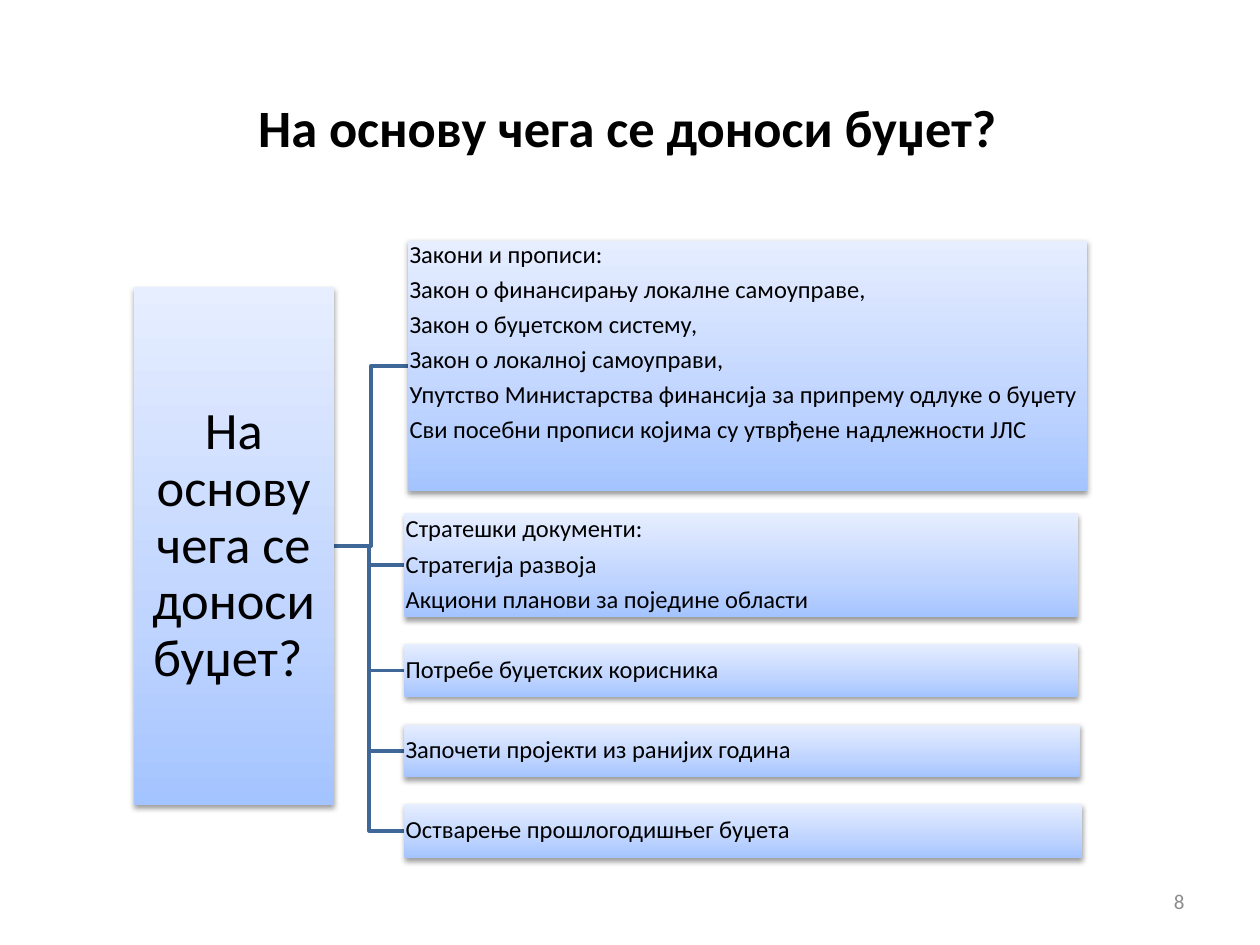
from lxml.etree import SubElement
from pptx import Presentation
from pptx.dml.color import RGBColor
from pptx.enum.shapes import MSO_SHAPE
from pptx.enum.text import MSO_ANCHOR, PP_ALIGN
from pptx.oxml import parse_xml
from pptx.oxml.ns import nsdecls, qn
from pptx.util import Inches, Pt

BLACK = RGBColor(0x00, 0x00, 0x00)
GRAY = RGBColor(0x8C, 0x8C, 0x8C)
LINE_BLUE = RGBColor(0x3F, 0x67, 0x97)
GRADIENT = [
    (0, RGBColor(0xA4, 0xC4, 0xFF)),
    (35, RGBColor(0xBF, 0xD4, 0xFF)),
    (100, RGBColor(0xE6, 0xEE, 0xFF)),
]

TITLE = "На основу чега се доноси буџет?"
ROOT_BOX = (1.06, 2.28, 1.59, 4.11)
# Position, anchor and lines of each branch
BRANCHES = [
    ((3.24, 1.91, 5.39, 1.99), MSO_ANCHOR.TOP, [
        "Закони и прописи:",
        "Закон о финансирању локалне самоуправе,",
        "Закон о буџетском систему,",
        "Закон о локалној самоуправи,",
        "Упутство Министарства финансија за припрему одлуке о буџету",
        "Сви посебни прописи којима су утврђене надлежности ЈЛС",
    ]),
    ((3.21, 4.07, 5.35, 0.83), MSO_ANCHOR.MIDDLE, [
        "Стратешки документи:",
        "Стратегија развоја",
        "Акциони планови за поједине области",
    ]),
    ((3.21, 5.11, 5.35, 0.42), MSO_ANCHOR.MIDDLE, ["Потребе буџетских корисника"]),
    ((3.21, 5.75, 5.36, 0.42), MSO_ANCHOR.MIDDLE, ["Започети пројекти из ранијих година"]),
    ((3.21, 6.38, 5.38, 0.43), MSO_ANCHOR.MIDDLE, ["Остварење прошлогодишњег буџета"]),
]


class SlideBuilder:
    """Holds the slide and the style of its elements."""

    font = "Calibri"

    def __init__(self, slide):
        self.slide = slide

    def set_text(self, shape, text, size, color=BLACK, bold=False,
                 align=PP_ALIGN.LEFT, anchor=MSO_ANCHOR.MIDDLE):
        frame = shape.text_frame
        frame.text = text
        frame.word_wrap = True
        frame.vertical_anchor = anchor
        for paragraph in frame.paragraphs:
            paragraph.alignment = align
            for run in paragraph.runs:
                run.font.name = self.font
                run.font.size = Pt(size)
                run.font.bold = bold
                run.font.color.rgb = color
        return frame

    def title(self, text, box):
        shape = self.slide.shapes.title
        shape.left, shape.top, shape.width, shape.height = map(Inches, box)
        self.set_text(shape, text, 30, bold=True, align=PP_ALIGN.CENTER)

    def page_number(self, text, box):
        shape = self.slide.shapes.add_textbox(*map(Inches, box))
        self.set_text(shape, text, 12, color=GRAY, align=PP_ALIGN.RIGHT)

    def elbow(self, start, end):
        (x1, y1), (x2, y2) = start, end
        middle = (x1 + x2) / 2
        builder = self.slide.shapes.build_freeform(Inches(x1), Inches(y1), scale=1.0)
        points = [(middle, y1), (middle, y2), (x2, y2)]
        builder.add_line_segments(
            [(Inches(x), Inches(y)) for x, y in points], close=False)
        shape = builder.convert_to_shape()
        shape.fill.background()
        shape.line.color.rgb = LINE_BLUE
        shape.line.width = Pt(2)
        shape.shadow.inherit = False

    def box(self, box, text, size, inset, align=PP_ALIGN.LEFT, anchor=MSO_ANCHOR.MIDDLE):
        shape = self.slide.shapes.add_shape(MSO_SHAPE.RECTANGLE, *map(Inches, box))
        shape.line.fill.background()
        self.gradient(shape)
        self.soft_shadow(shape)
        frame = self.set_text(shape, text, size, align=align, anchor=anchor)
        frame.margin_left = frame.margin_right = Inches(inset)
        frame.margin_top = frame.margin_bottom = Inches(inset)
        for paragraph in frame.paragraphs:
            paragraph.line_spacing = 0.9
            paragraph.space_after = Pt(size * 0.35)

    def gradient(self, shape):
        # Three stops, running from the bottom edge to the top
        shape.fill.gradient()
        shape.fill.gradient_angle = 90
        stops = shape._element.spPr.find(qn("a:gradFill")).find(qn("a:gsLst"))
        for stop in list(stops):
            stops.remove(stop)
        for position, color in GRADIENT:
            stop = SubElement(stops, qn("a:gs"), pos=str(position * 1000))
            SubElement(stop, qn("a:srgbClr"), val=str(color))

    def soft_shadow(self, shape):
        shape.shadow.inherit = False
        effects = shape._element.spPr.find(qn("a:effectLst"))
        effects.append(parse_xml(
            f'<a:outerShdw {nsdecls("a")} blurRad="{Pt(3.1)}" dist="{Pt(1.6)}" '
            'dir="5400000" rotWithShape="0"><a:srgbClr val="000000">'
            '<a:alpha val="38000"/></a:srgbClr></a:outerShdw>'))


def main():
    presentation = Presentation()
    presentation.slide_width = Inches(10)
    presentation.slide_height = Inches(7.5)
    slide = presentation.slides.add_slide(presentation.slide_layouts[5])
    builder = SlideBuilder(slide)

    # Title and page number
    builder.title(TITLE, (0.48, 0.54, 9, 0.93))
    builder.page_number("8", (7.17, 6.95, 2.33, 0.4))

    # Connectors from the root to the middle of each branch, behind the boxes
    left, top, width, height = ROOT_BOX
    root_exit = (left + width, top + height / 2)
    for (x, y, _, branch_height), _, _ in reversed(BRANCHES):
        builder.elbow(root_exit, (x, y + branch_height / 2))

    # Root and branches
    builder.box(ROOT_BOX, TITLE + " ", 30, 0.02, align=PP_ALIGN.CENTER)
    for box, anchor, lines in BRANCHES:
        builder.box(box, "\n".join(lines), 14, 0.01, anchor=anchor)

    presentation.save("out.pptx")


if __name__ == "__main__":
    main()
